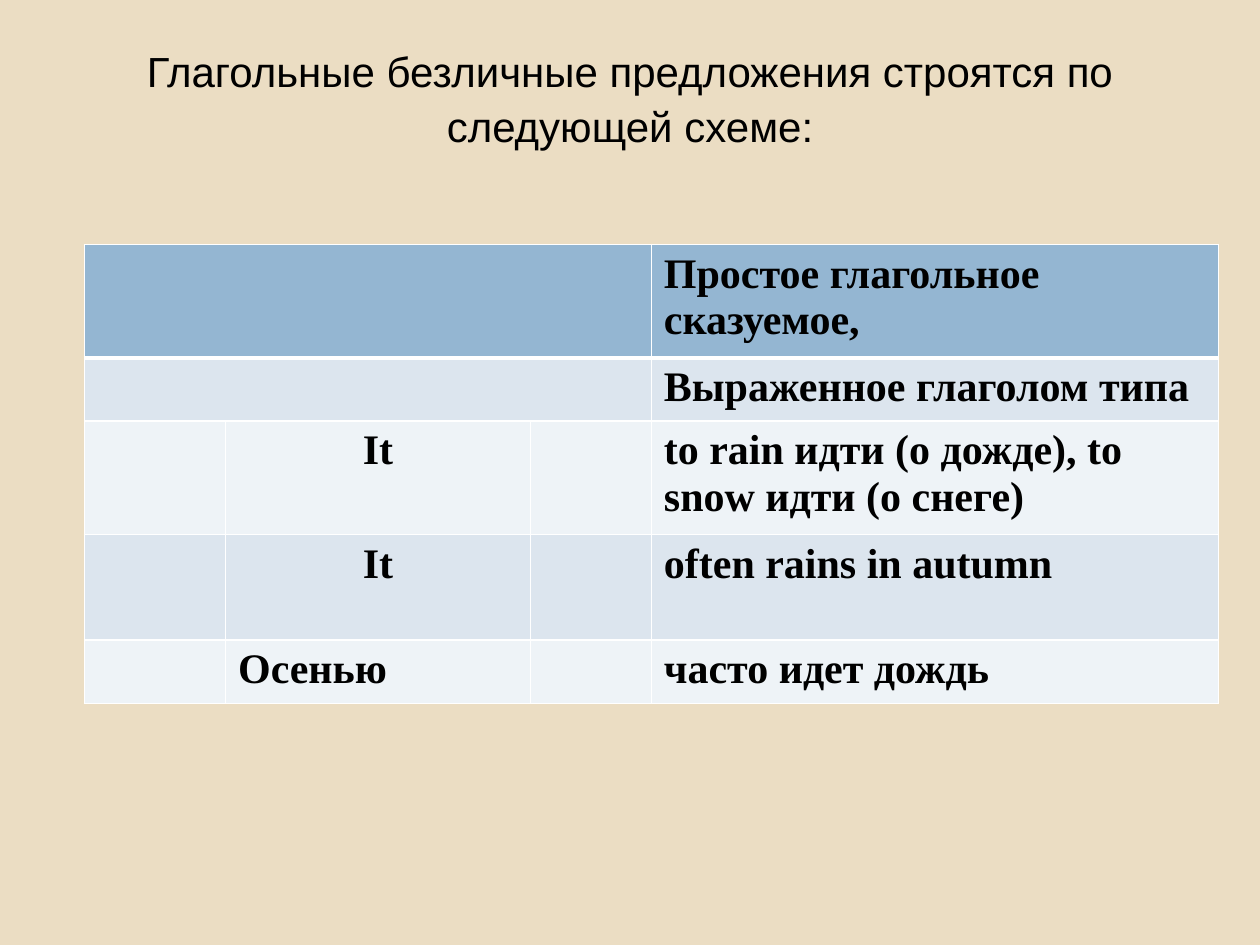
from lxml.etree import SubElement
from pptx import Presentation
from pptx.dml.color import RGBColor
from pptx.enum.text import MSO_ANCHOR, PP_ALIGN
from pptx.oxml.ns import qn
from pptx.util import Inches, Pt

TITLE = "Глагольные безличные предложения строятся по следующей схеме:"
ROWS = [
    ("", "Простое глагольное сказуемое,"),
    ("", "Выраженное глаголом типа"),
    ("It", "to rain идти (о дожде), to snow идти (о снеге)"),
    ("It", "often rains in autumn"),
    ("Осенью", "часто идет дождь"),
]
COLUMN_WIDTHS = [1.12, 2.42, 0.96, 4.5]
ROW_HEIGHTS = [0.83, 0.47, 0.84, 0.84, 0.47]
HEADER_FILL = "94B6D2"
BAND_FILLS = ["EEF3F7", "DCE5EE"]
MERGED_ROWS = 2


def color(value):
    return RGBColor.from_string(value)


def add_text(paragraph, text, font_name, bold=False):
    run = paragraph.add_run()
    run.text = text
    run.font.name = font_name
    run.font.size = Pt(24)
    run.font.bold = bold
    run.font.color.rgb = color("000000")


def add_title(slide):
    shape = slide.shapes.add_textbox(Inches(0.5), Inches(0.3), Inches(9), Inches(1.25))
    frame = shape.text_frame
    frame.word_wrap = True
    frame.vertical_anchor = MSO_ANCHOR.TOP
    frame.margin_top = Inches(0.02)
    paragraph = frame.paragraphs[0]
    paragraph.alignment = PP_ALIGN.CENTER
    paragraph.line_spacing = 1.1
    add_text(paragraph, TITLE, "Arial")


def set_borders(cell, bottom_width):
    properties = cell._tc.get_or_add_tcPr()
    widths = {"a:lnL": 1, "a:lnR": 1, "a:lnT": 1, "a:lnB": bottom_width}
    for position, (tag, width) in enumerate(widths.items()):
        line = SubElement(properties, qn(tag), w=str(Pt(width)))
        fill = SubElement(line, qn("a:solidFill"))
        SubElement(fill, qn("a:srgbClr"), val="FFFFFF")
        properties.insert(position, line)


def style_cell(cell, row_index):
    is_header = row_index == 0
    cell.fill.solid()
    cell.fill.fore_color.rgb = color(HEADER_FILL if is_header else BAND_FILLS[row_index % 2])
    set_borders(cell, 3 if is_header else 1)


def add_scheme_table(slide):
    frame = slide.shapes.add_table(
        len(ROWS), len(COLUMN_WIDTHS), Inches(0.67), Inches(1.94),
        Inches(sum(COLUMN_WIDTHS)), Inches(sum(ROW_HEIGHTS)))
    table = frame.table
    for column, width in zip(table.columns, COLUMN_WIDTHS):
        column.width = Inches(width)
    for row_index, (subject, predicate) in enumerate(ROWS):
        row = table.rows[row_index]
        row.height = Inches(ROW_HEIGHTS[row_index])
        for cell in row.cells:
            style_cell(cell, row_index)
        if row_index < MERGED_ROWS:
            row.cells[0].merge(row.cells[2])
        for column_index, text in ((1, subject), (3, predicate)):
            if text:
                paragraph = row.cells[column_index].text_frame.paragraphs[0]
                add_text(paragraph, text, "Times New Roman", bold=True)
                if text == "It":
                    paragraph.alignment = PP_ALIGN.CENTER


def main():
    presentation = Presentation()
    presentation.slide_width = Inches(10)
    presentation.slide_height = Inches(7.5)
    slide = presentation.slides.add_slide(presentation.slide_layouts[6])
    slide.background.fill.solid()
    slide.background.fill.fore_color.rgb = color("EBDDC3")
    add_title(slide)
    add_scheme_table(slide)
    presentation.save("out.pptx")


if __name__ == "__main__":
    main()
